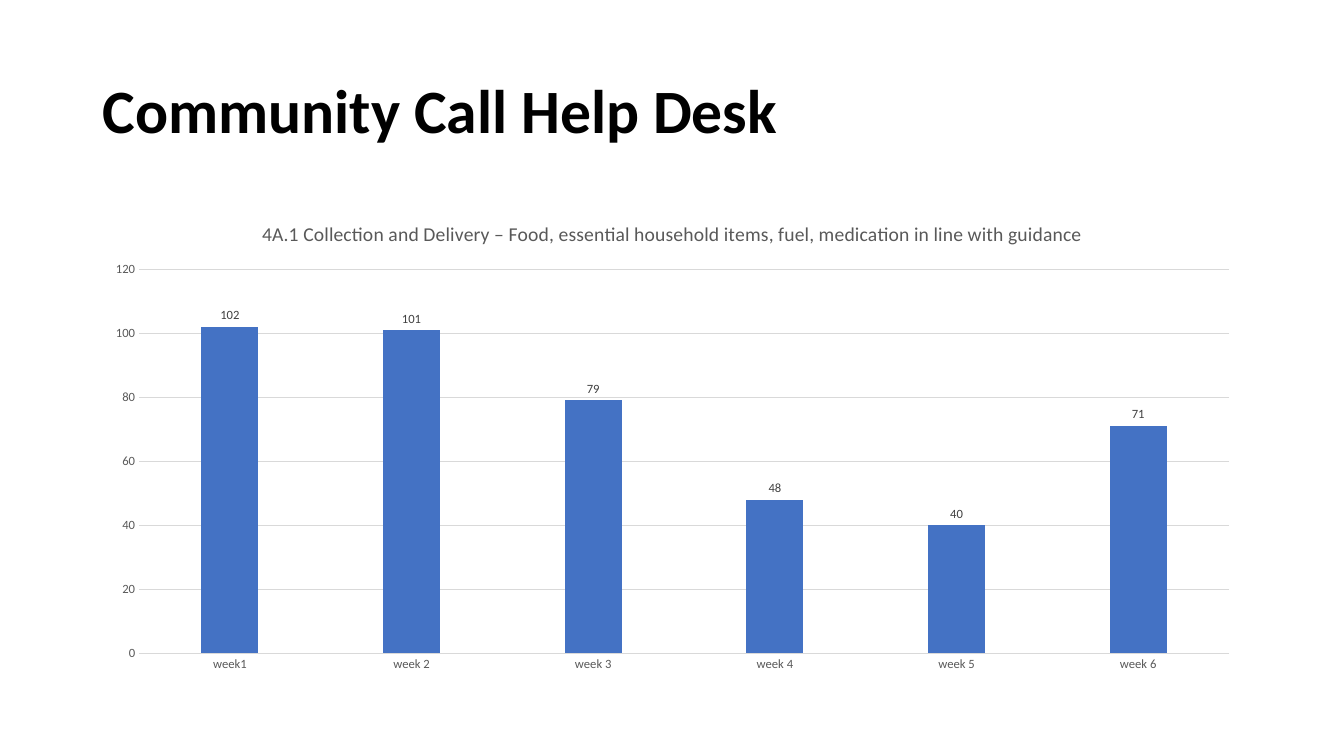
from pptx import Presentation
from pptx.chart.data import CategoryChartData
from pptx.dml.color import RGBColor
from pptx.enum.chart import XL_CHART_TYPE, XL_LABEL_POSITION, XL_TICK_MARK
from pptx.enum.text import MSO_ANCHOR, PP_ALIGN
from pptx.util import Inches, Pt

BLACK = RGBColor(0x00, 0x00, 0x00)
BLUE = RGBColor(0x44, 0x72, 0xC4)
GREY = RGBColor(0x59, 0x59, 0x59)
DARK_GREY = RGBColor(0x40, 0x40, 0x40)
LIGHT_GREY = RGBColor(0xD9, 0xD9, 0xD9)

FONT = "Calibri"
SERVICE = ("4A.1 Collection and Delivery – Food, essential household items, "
           "fuel, medication in line with guidance")
CALLS = {"week1": 102, "week 2": 101, "week 3": 79,
         "week 4": 48, "week 5": 40, "week 6": 71}


def style_font(font, size, color, bold=False):
    font.name = FONT
    font.size = Pt(size)
    font.bold = bold
    font.color.rgb = color


def style_line(line):
    line.color.rgb = LIGHT_GREY
    line.width = Pt(0.75)


def place_title(slide, text, left, top, width, height):
    title = slide.shapes.title
    title.left, title.top = Inches(left), Inches(top)
    title.width, title.height = Inches(width), Inches(height)
    tf = title.text_frame
    tf.text = text
    tf.word_wrap = True
    tf.vertical_anchor = MSO_ANCHOR.MIDDLE
    p = tf.paragraphs[0]
    p.alignment = PP_ALIGN.LEFT
    p.line_spacing = 0.9
    style_font(p.font, 44, BLACK, bold=True)


def style_axes(chart):
    for axis in (chart.category_axis, chart.value_axis):
        axis.major_tick_mark = axis.minor_tick_mark = XL_TICK_MARK.NONE
        style_font(axis.tick_labels.font, 9, GREY)
    style_line(chart.category_axis.format.line)
    values = chart.value_axis
    values.minimum_scale, values.maximum_scale, values.major_unit = 0, 120, 20
    values.format.line.fill.background()
    values.has_major_gridlines = True
    style_line(values.major_gridlines.format.line)


def add_calls_chart(slide, left, top, width, height):
    data = CategoryChartData()
    data.categories = list(CALLS)
    data.add_series(SERVICE, list(CALLS.values()))
    chart = slide.shapes.add_chart(
        XL_CHART_TYPE.COLUMN_CLUSTERED, Inches(left), Inches(top),
        Inches(width), Inches(height), data).chart
    style_font(chart.font, 10, BLACK)
    chart.has_legend = False
    chart.has_title = True
    tf = chart.chart_title.text_frame
    tf.text = SERVICE
    style_font(tf.paragraphs[0].font, 14, GREY)
    chart.chart_title.include_in_layout = False
    style_axes(chart)

    plot = chart.plots[0]
    plot.gap_width = 219
    plot.overlap = -27
    plot.vary_by_categories = False
    series = plot.series[0]
    series.invert_if_negative = False
    series.format.fill.solid()
    series.format.fill.fore_color.rgb = BLUE
    labels = series.data_labels
    labels.show_value = True
    labels.position = XL_LABEL_POSITION.OUTSIDE_END
    style_font(labels.font, 9, DARK_GREY)


def main():
    prs = Presentation()
    prs.slide_width, prs.slide_height = Inches(13.33), Inches(7.5)
    slide = prs.slides.add_slide(prs.slide_layouts[5])
    place_title(slide, "Community Call Help Desk", 0.92, 0.4, 11.5, 1.45)
    add_calls_chart(slide, 0.92, 2, 11.5, 4.76)
    prs.save("out.pptx")


if __name__ == "__main__":
    main()
